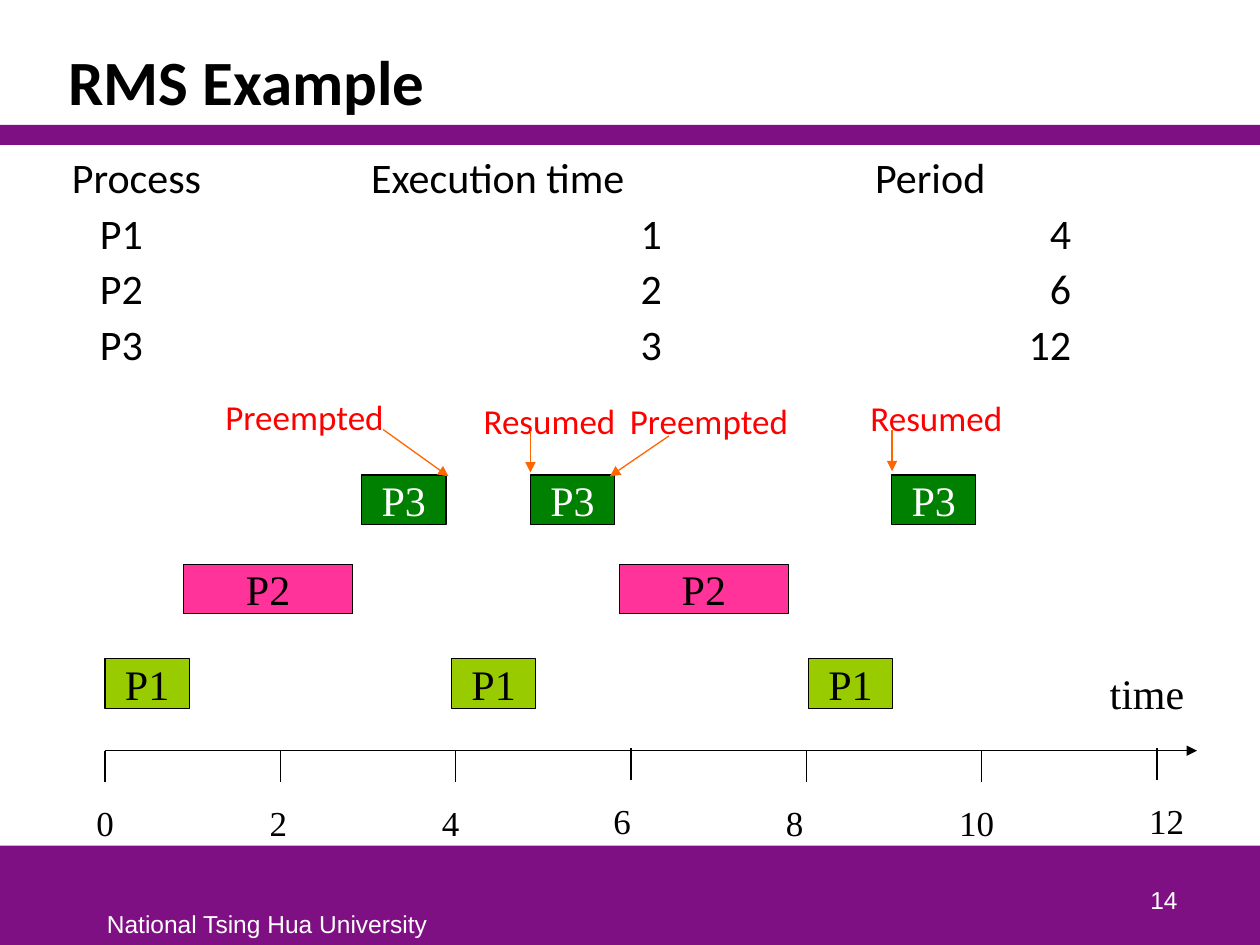
from typing import NamedTuple

from lxml import etree
from pptx import Presentation
from pptx.dml.color import RGBColor
from pptx.enum import shapes, text
from pptx.oxml import ns
from pptx.util import Pt

PURPLE = RGBColor(0x7F, 0x10, 0x84)
WHITE = RGBColor(0xFF, 0xFF, 0xFF)
BLACK = RGBColor(0x00, 0x00, 0x00)
LIME = RGBColor(0x99, 0xCC, 0x00)
PINK = RGBColor(0xFF, 0x33, 0x99)
GREEN = RGBColor(0x00, 0x80, 0x00)
RED = RGBColor(0xFF, 0x00, 0x00)
ORANGE = RGBColor(0xFF, 0x66, 0x00)
SANS, SERIF, FOOTER_FONT = "Calibri", "Times New Roman", "Arial"
AXIS_LEFT, AXIS_TOP, TICK_GAP, TICK_LENGTH = 60, 429, 100.2, 18


class Process(NamedTuple):
    name: str
    fill: RGBColor
    font_color: RGBColor
    top: float
    width: float
    starts: tuple


class Tick(NamedTuple):
    label: str
    label_left: float
    width: float = 24.5
    rise: float = 0


class Callout(NamedTuple):
    label: str
    left: float
    top: float
    width: float
    start: tuple
    end: tuple


class TabRow(NamedTuple):
    content: str
    stops: tuple


PROCESSES = (
    Process("P1", LIME, BLACK, 376.5, 48.2, (60, 258, 462)),
    Process("P2", PINK, BLACK, 322.5, 96.5, (105, 354)),
    Process("P3", GREEN, WHITE, 271.5, 48.2, (206.7, 303.1, 509.5)),
)
TICKS = (
    Tick("0", 48), Tick("2", 147), Tick("4", 245.5), Tick("6", 343.5, rise=1.4),
    Tick("8", 442), Tick("10", 541, 34.5), Tick("12", 649.5, 34.5, 1.4),
)
CALLOUTS = (
    Callout("Preempted", 121.7, 222.5, 106, (219, 245.5), (256.3, 272.2)),
    Callout("Resumed", 269.3, 224.6, 90.7, (303.1, 246.2), (303.1, 270)),
    Callout("Preempted", 352.8, 224.6, 106, (382.3, 249.1), (348.5, 272.2)),
    Callout("Resumed", 490.3, 223.2, 90.7, (509.8, 245.5), (509.8, 269.3)),
)
HEADER_STOPS = ((171, "l"), (459, "l"))
ROW_STOPS = ((16, "l"), (325, "l"), (571, "r"))
TABLE_ROWS = (
    TabRow("Process\tExecution time\tPeriod", HEADER_STOPS),
    TabRow("\tP1\t1\t4", ROW_STOPS),
    TabRow("\tP2\t2\t6", ROW_STOPS),
    TabRow("\tP3\t3\t12", ROW_STOPS),
)


def place(shape, left: float, top: float, width: float, height: float) -> None:
    shape.left, shape.top = Pt(left), Pt(top)
    shape.width, shape.height = Pt(width), Pt(height)


def write(frame, content: str, *, size: float, font: str, color: RGBColor,
          bold: bool = False, wrap: bool = False,
          align=text.PP_ALIGN.LEFT, anchor=text.MSO_ANCHOR.TOP) -> None:
    frame.word_wrap = wrap
    frame.vertical_anchor = anchor
    paragraph = frame.paragraphs[0]
    paragraph.text = content
    paragraph.alignment = align
    style(paragraph, size, font, color, bold)


def style(paragraph, size: float, font: str, color: RGBColor, bold: bool = False) -> None:
    for run in paragraph.runs:
        run.font.size, run.font.name, run.font.bold = Pt(size), font, bold
        run.font.color.rgb = color


def add_label(parent, content: str, left: float, top: float, width: float,
              height: float, **text_format) -> None:
    box = parent.shapes.add_textbox(Pt(left), Pt(top), Pt(width), Pt(height))
    write(box.text_frame, content, **text_format)


def add_rectangle(slide, left: float, top: float, width: float, height: float,
                  fill: RGBColor, outlined: bool = False):
    shape = slide.shapes.add_shape(shapes.MSO_SHAPE.RECTANGLE,
                                   Pt(left), Pt(top), Pt(width), Pt(height))
    shape.shadow.inherit = False
    shape.fill.solid()
    shape.fill.fore_color.rgb = fill
    if outlined:
        shape.line.color.rgb = BLACK
        shape.line.width = Pt(0.75)
    else:
        shape.line.fill.background()
    return shape


def add_line(parent, start: tuple, end: tuple, color: RGBColor, arrow: bool = False) -> None:
    line = parent.shapes.add_connector(
        shapes.MSO_CONNECTOR.STRAIGHT, *(Pt(value) for value in (*start, *end)))
    line.line.color.rgb = color
    line.line.width = Pt(0.75)
    if arrow:
        etree.SubElement(line.line._get_or_add_ln(), ns.qn("a:tailEnd"), type="triangle")
    etree.SubElement(line._element.spPr, ns.qn("a:effectLst"))


def add_process_list(slide) -> None:
    """Lists the processes in columns set by tab stops."""
    box = slide.shapes.add_textbox(Pt(34), Pt(83), Pt(644), Pt(140))
    frame = box.text_frame
    frame.word_wrap = True
    for index, row in enumerate(TABLE_ROWS):
        paragraph = frame.add_paragraph() if index else frame.paragraphs[0]
        paragraph.text = row.content
        if index:
            paragraph.space_before = Pt(3)
        tabs = etree.SubElement(paragraph._p.get_or_add_pPr(), ns.qn("a:tabLst"))
        for position, align in row.stops:
            etree.SubElement(tabs, ns.qn("a:tab"), pos=str(Pt(position)), algn=align)
        style(paragraph, 24, SANS, BLACK)


def add_axis(slide) -> None:
    add_line(slide, (AXIS_LEFT, AXIS_TOP), (684, AXIS_TOP), BLACK, arrow=True)
    add_label(slide, "time", 627, 378, 57, 36, size=24, font=SERIF, color=BLACK)
    for index, tick in enumerate(TICKS):
        x, y = AXIS_LEFT + index * TICK_GAP, AXIS_TOP - tick.rise
        add_line(slide, (x, y), (x, y + TICK_LENGTH), BLACK)
        add_label(slide, tick.label, tick.label_left, 454.5 - tick.rise, tick.width, 31,
                  size=20, font=SERIF, color=BLACK)


def add_process(slide, process: Process) -> None:
    for start in process.starts:
        bar = add_rectangle(slide, start, process.top, process.width, 28.3,
                            process.fill, outlined=True)
        write(bar.text_frame, process.name, size=24, font=SERIF, color=process.font_color,
              align=text.PP_ALIGN.CENTER, anchor=text.MSO_ANCHOR.MIDDLE)


def add_callout(slide, callout: Callout) -> None:
    group = slide.shapes.add_group_shape()
    add_label(group, callout.label, callout.left, callout.top, callout.width, 31.5,
              size=20, font=SANS, color=RED)
    add_line(group, callout.start, callout.end, ORANGE, arrow=True)


def main() -> None:
    presentation = Presentation()
    presentation.slide_width, presentation.slide_height = Pt(720), Pt(540)
    slide = presentation.slides.add_slide(presentation.slide_layouts[5])

    add_rectangle(slide, 0, 483.3, 720, 56.7, PURPLE)
    add_rectangle(slide, 0, 71.4, 720, 11.5, PURPLE)
    add_label(slide, "National Tsing Hua University", 54, 516, 199, 24,
              size=14, font=FOOTER_FONT, color=WHITE)

    title = slide.shapes.title
    place(title, 31.7, 18, 677.5, 53.3)
    write(title.text_frame, "RMS Example", size=36, font=SANS, color=BLACK, bold=True,
          wrap=True, anchor=text.MSO_ANCHOR.BOTTOM)
    title.text_frame.paragraphs[0].line_spacing = 0.85

    add_process_list(slide)
    add_axis(slide)
    for process in PROCESSES:
        add_process(slide, process)
    add_label(slide, "14", 530, 490.3, 150, 36, size=14, font=FOOTER_FONT, color=WHITE,
              wrap=True, align=text.PP_ALIGN.RIGHT, anchor=text.MSO_ANCHOR.BOTTOM)
    for callout in CALLOUTS:
        add_callout(slide, callout)
    presentation.save("out.pptx")


if __name__ == "__main__":
    main()
